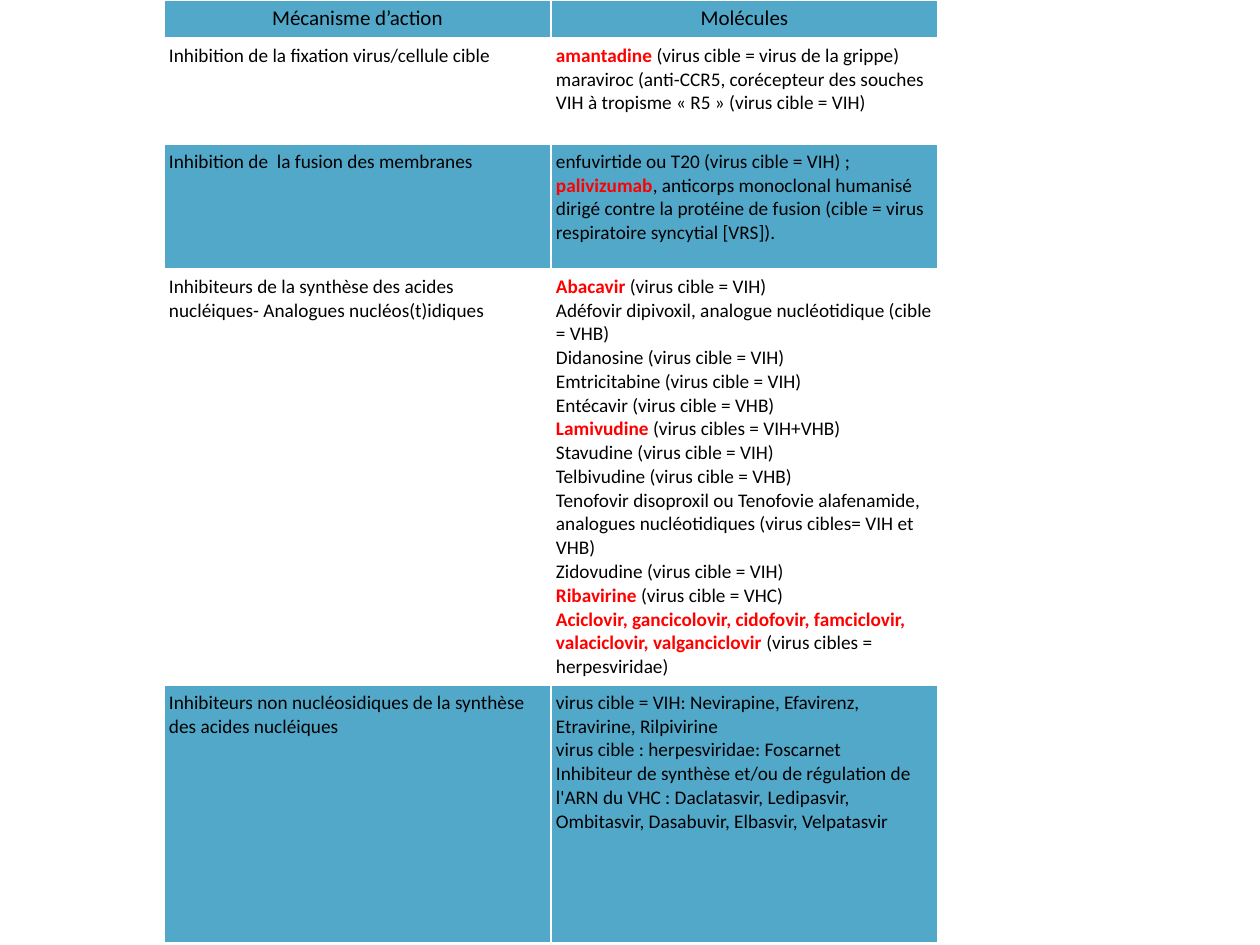
from pptx import Presentation
from pptx.dml.color import RGBColor as RGB
from pptx.enum.text import PP_ALIGN as ALIGN
from pptx.util import Inches, Pt

PX = Inches(1) / 126
FONT = "Calibri"
COLORS = {"band": "52A8C9", "plain": "FFFFFF", "text": "000000", "key": "FF0000"}
COL_WIDTH = 387
ROW_HEIGHTS = [38, 106, 125, 393, 258]
TABLE_HEIGHT = 935

# Each row: mechanism, then paragraphs of molecules; *stars* mark key drugs.
ROWS = [
    ("Mécanisme d’action", ["Molécules"]),
    ("Inhibition de la fixation virus/cellule cible ", [
        "*amantadine* (virus cible = virus de la grippe)",
        "maraviroc (anti-CCR5, corécepteur des souches VIH à tropisme « R5 » (virus cible = VIH)",
    ]),
    ("Inhibition de  la fusion des membranes", [
        "enfuvirtide ou T20 (virus cible = VIH) ;",
        "*palivizumab*, anticorps monoclonal humanisé dirigé contre la protéine "
        "de fusion (cible = virus respiratoire syncytial [VRS]).",
    ]),
    ("Inhibiteurs de la synthèse des acides nucléiques- Analogues nucléos(t)idiques", [
        "*Abacavir* (virus cible = VIH)",
        "Adéfovir dipivoxil, analogue nucléotidique (cible = VHB)",
        "Didanosine (virus cible = VIH)",
        "Emtricitabine (virus cible = VIH)",
        "Entécavir (virus cible = VHB)",
        "*Lamivudine *(virus cibles = VIH+VHB)",
        "Stavudine (virus cible = VIH)",
        "Telbivudine (virus cible = VHB)",
        "Tenofovir disoproxil ou Tenofovie alafenamide, analogues nucléotidiques "
        "(virus cibles= VIH et  VHB)",
        "Zidovudine (virus cible = VIH)",
        "*Ribavirine* (virus cible = VHC)",
        "*Aciclovir, gancicolovir, cidofovir, famciclovir, valaciclovir, "
        "valganciclovir* (virus cibles = herpesviridae)",
    ]),
    ("Inhibiteurs non nucléosidiques de la synthèse des acides nucléiques", [
        "virus cible = VIH: Nevirapine, Efavirenz, Etravirine, Rilpivirine",
        "virus cible : herpesviridae: Foscarnet",
        "Inhibiteur de synthèse et/ou de régulation de l'ARN du VHC : Daclatasvir, "
        "Ledipasvir, Ombitasvir, Dasabuvir, Elbasvir, Velpatasvir",
    ]),
]


def px(n):
    return round(n * PX)


def color(name):
    return RGB.from_string(COLORS[name])


def write_paragraph(p, text, size, align):
    """Write text in runs, with the parts between stars bold and red."""
    p.alignment = align
    for i, part in enumerate(text.split("*")):
        if not part:
            continue
        key = i % 2 == 1
        r = p.add_run()
        r.text = part
        r.font.name = FONT
        r.font.size = Pt(size)
        r.font.bold = key
        r.font.color.rgb = color("key" if key else "text")


def fill_cell(cell, paragraphs, fill, size, align):
    cell.margin_left = cell.margin_right = px(5)
    cell.margin_top = cell.margin_bottom = px(6)
    cell.fill.solid()
    cell.fill.fore_color.rgb = color(fill)
    tf = cell.text_frame
    for i, text in enumerate(paragraphs):
        p = tf.add_paragraph() if i else tf.paragraphs[0]
        write_paragraph(p, text, size, align)


def add_antiviral_table(s):
    frame = s.shapes.add_table(len(ROWS), 2, px(164), 0, px(2 * COL_WIDTH), px(TABLE_HEIGHT))
    table = frame.table
    for col in table.columns:
        col.width = px(COL_WIDTH)
    for i, (mechanism, molecules) in enumerate(ROWS):
        table.rows[i].height = px(ROW_HEIGHTS[i])
        fill = "plain" if i % 2 else "band"
        size, align = (11, ALIGN.LEFT) if i else (12, ALIGN.CENTER)
        for j, paragraphs in enumerate(([mechanism], molecules)):
            fill_cell(table.cell(i, j), paragraphs, fill, size, align)
    frame.height = px(TABLE_HEIGHT)


def main():
    prs = Presentation()
    prs.slide_width, prs.slide_height = px(1260), px(945)
    s = prs.slides.add_slide(prs.slide_layouts[6])
    add_antiviral_table(s)
    prs.save("out.pptx")


if __name__ == "__main__":
    main()
